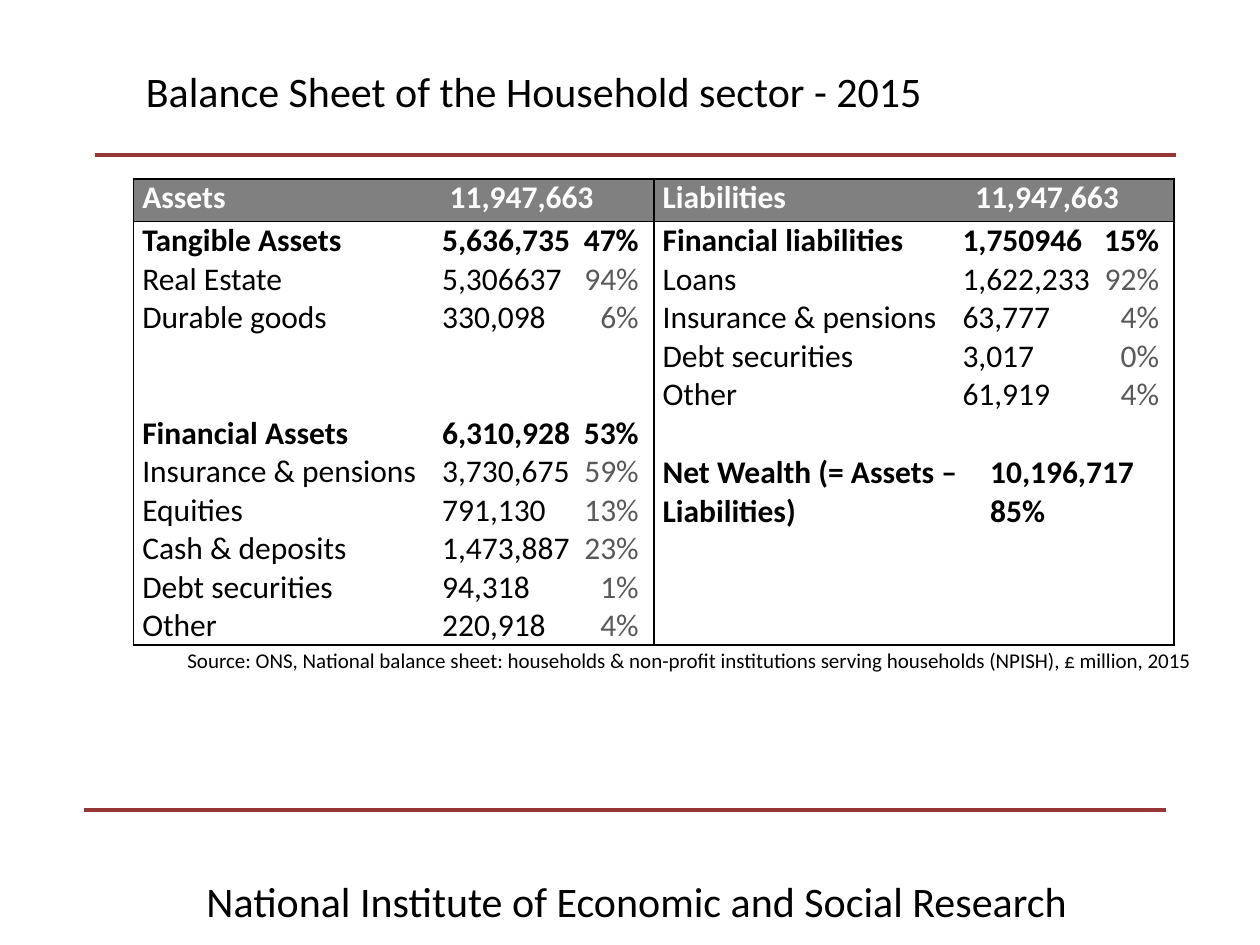
from lxml.etree import SubElement
from pptx import Presentation
from pptx.dml.color import RGBColor
from pptx.enum.shapes import MSO_CONNECTOR
from pptx.enum.text import PP_ALIGN
from pptx.oxml.ns import qn
from pptx.util import Inches, Pt

BLACK = RGBColor(0x00, 0x00, 0x00)
WHITE = RGBColor(0xFF, 0xFF, 0xFF)
GREY = RGBColor(0x59, 0x59, 0x59)
HEADER = RGBColor(0x80, 0x80, 0x80)
RULE = RGBColor(0x95, 0x37, 0x35)
FONT = "Calibri"

COLUMNS = [2.44, 1.69, 2.48, 0.12, 1.53]
ROWS = [0.34, 1.53, 1.83]
LINE_HEIGHT = 0.31
# Tab stops for the amount and the share inside a cell
TABS = [(2.38, "l"), (3.94, "r")]
# Columns and rows whose outer edges carry a border
LEFT_EDGES, RIGHT_EDGES = (0, 2), (1, 4)
TOP_EDGES, BOTTOM_EDGES = (0, 1), (0, 2)

HEADINGS = {0: "Assets", 1: "11,947,663", 2: "Liabilities", 3: "11,947,663"}
TANGIBLE = [
    ("Tangible Assets", "5,636,735", "47%"),
    ("Real Estate", "5,306637", "94%"),
    ("Durable goods", "330,098", "6%"),
]
FINANCIAL = [
    ("Financial Assets", "6,310,928", "53%"),
    ("Insurance & pensions", "3,730,675", "59%"),
    ("Equities", "791,130", "13%"),
    ("Cash & deposits", "1,473,887", "23%"),
    ("Debt securities", "94,318", "1%"),
    ("Other", "220,918", "4%"),
]
LIABILITIES = [
    ("Financial liabilities", "1,750946", "15%"),
    ("Loans", "1,622,233", "92%"),
    ("Insurance & pensions", "63,777", "4%"),
    ("Debt securities", "3,017", "0%"),
    ("Other", "61,919", "4%"),
]


def add_rule(s, left, top, width):
    line = s.shapes.add_connector(MSO_CONNECTOR.STRAIGHT, Inches(left), Inches(top),
                                  Inches(left + width), Inches(top))
    line.line.color.rgb = RULE
    line.line.width = Pt(2.25)
    SubElement(line._element.spPr, qn("a:effectLst"))


def add_run(p, text, color):
    r = p.add_run()
    r.text = text
    r.font.color.rgb = color


def set_font(p, size, bold=False):
    p.font.name = FONT
    p.font.size = Pt(size)
    p.font.bold = bold


def add_text(s, text, box, size, align=PP_ALIGN.LEFT):
    tf = s.shapes.add_textbox(*map(Inches, box)).text_frame
    tf.word_wrap = True
    p = tf.paragraphs[0]
    p.alignment = align
    set_font(p, size)
    add_run(p, text, BLACK)


def add_tabs(p):
    tabs = SubElement(p._p.get_or_add_pPr(), qn("a:tabLst"))
    for position, align in TABS:
        SubElement(tabs, qn("a:tab"), pos=str(Inches(position)), algn=align)


def paragraphs(tf, items):
    """Pair each item with a paragraph of the frame."""
    for i, item in enumerate(items):
        yield (tf.add_paragraph() if i else tf.paragraphs[0]), item


def fill_bold(cell, lines, color=BLACK, top=0):
    cell.margin_top = Inches(top)
    for p, text in paragraphs(cell.text_frame, lines):
        set_font(p, 18, bold=True)
        add_run(p, text, color)


def fill_entries(cell, entries):
    """First entry is the bold subtotal; the rest have grey shares."""
    for p, (name, amount, share) in paragraphs(cell.text_frame, entries):
        subtotal = entries[0][0] == name
        add_tabs(p)
        set_font(p, 18, bold=subtotal)
        add_run(p, f"{name}\t{amount}\t", BLACK)
        add_run(p, share, BLACK if subtotal else GREY)


def set_borders(cell, row, col):
    last = col + (cell.span_width if cell.is_merge_origin else 1) - 1
    edges = {
        "a:lnL": col in LEFT_EDGES,
        "a:lnR": last in RIGHT_EDGES,
        "a:lnT": row in TOP_EDGES,
        "a:lnB": row in BOTTOM_EDGES,
    }
    tc_pr = cell._tc.get_or_add_tcPr()
    for tag, visible in edges.items():
        ln = SubElement(tc_pr, qn(tag), w=str(Pt(1)))
        if visible:
            fill = SubElement(ln, qn("a:solidFill"))
            SubElement(fill, qn("a:srgbClr"), val=str(BLACK))
        else:
            SubElement(ln, qn("a:noFill"))


def add_balance_sheet(s):
    table = s.shapes.add_table(len(ROWS), len(COLUMNS), Inches(1.06), Inches(1.42),
                               Inches(sum(COLUMNS)), Inches(sum(ROWS))).table
    table.first_row = table.horz_banding = False
    for column, width in zip(table.columns, COLUMNS):
        column.width = Inches(width)
    for row, height in zip(table.rows, ROWS):
        row.height = Inches(height)

    for row, first, last in [(0, 3, 4), (1, 0, 1), (1, 2, 4), (2, 0, 1), (2, 2, 3)]:
        table.cell(row, first).merge(table.cell(row, last))

    # Borders, margins and fills
    for row in range(len(ROWS)):
        for col in range(len(COLUMNS)):
            cell = table.cell(row, col)
            set_borders(cell, row, col)
            cell.margin_left = cell.margin_right = Inches(0.07)
            cell.margin_top = cell.margin_bottom = 0
            if row == 0:
                cell.fill.solid()
                cell.fill.fore_color.rgb = HEADER
            else:
                cell.fill.background()

    # Contents
    for col, text in HEADINGS.items():
        fill_bold(table.cell(0, col), [text], WHITE)
    fill_entries(table.cell(1, 0), TANGIBLE)
    fill_entries(table.cell(1, 2), LIABILITIES)
    fill_entries(table.cell(2, 0), FINANCIAL)
    fill_bold(table.cell(2, 2), ["Net Wealth (= Assets – Liabilities)"], top=LINE_HEIGHT)
    fill_bold(table.cell(2, 4), ["10,196,717", "85%"], top=LINE_HEIGHT)


def main():
    prs = Presentation()
    prs.slide_width, prs.slide_height = Inches(10), Inches(7.5)
    s = prs.slides.add_slide(prs.slide_layouts[6])

    # Frame: rules and institute name
    add_rule(s, 0.75, 1.23, 8.58)
    add_rule(s, 0.67, 6.43, 8.58)
    add_text(s, "National Institute of Economic and Social Research",
             (1.54, 6.9, 7.95, 0.4), 24)

    # Title, table and source
    add_balance_sheet(s)
    add_text(s, "Balance Sheet of the Household sector - 2015", (1.06, 0.47, 8.03, 0.5), 24)
    add_text(s, "Source: ONS, National balance sheet: households & non-profit institutions "
             "serving households (NPISH), £ million, 2015",
             (0.43, 5.09, 9.13, 0.3), 12, PP_ALIGN.RIGHT)

    prs.save("out.pptx")


if __name__ == "__main__":
    main()
